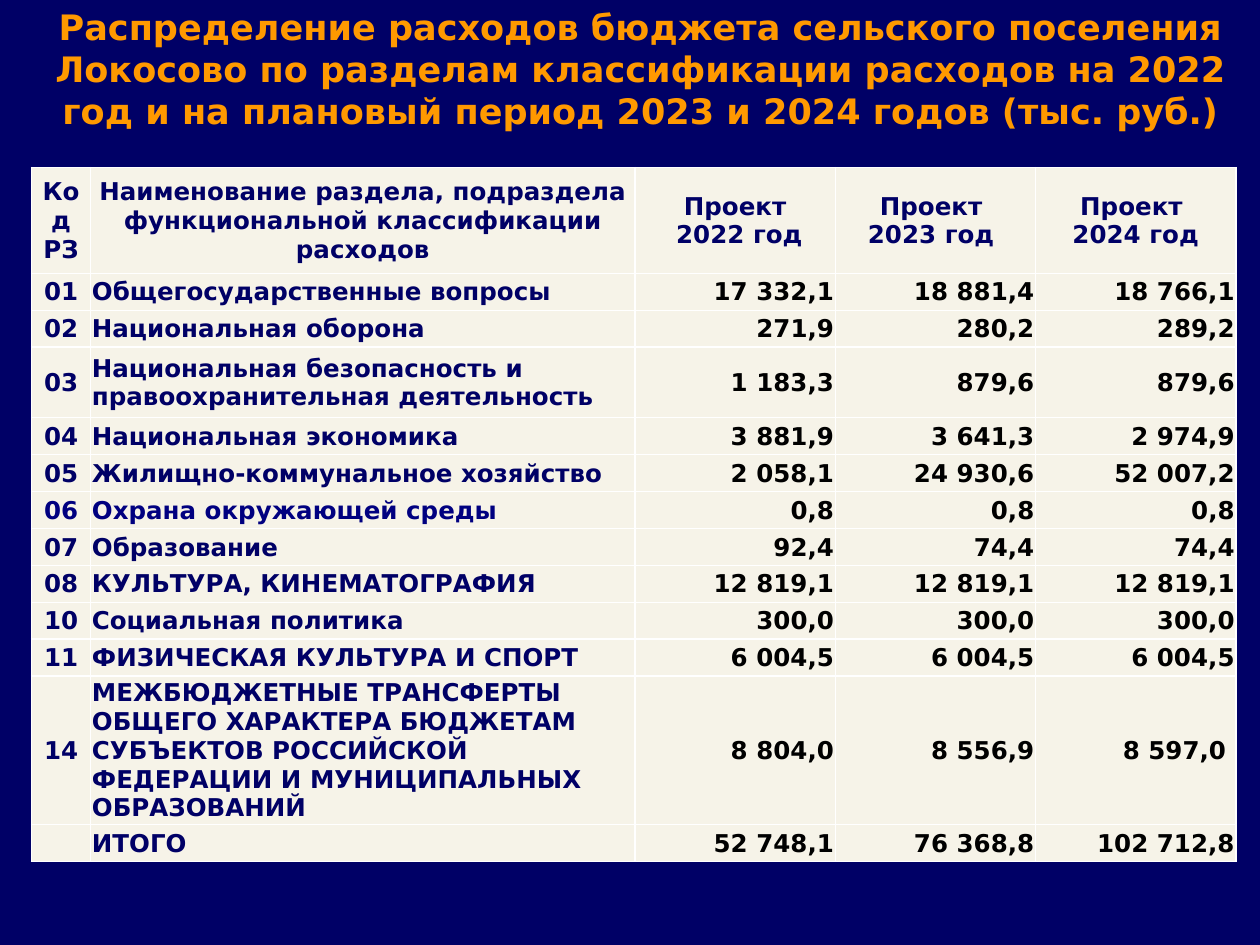
from lxml import etree
from pptx import Presentation, util as u
from pptx.dml.color import RGBColor
from pptx.enum import text
from pptx.oxml.ns import qn

TITLE = ("Распределение расходов бюджета сельского поселения Локосово по разделам "
         "классификации расходов на 2022 год и на плановый период 2023 и 2024 годов (тыс. руб.)")
HEADER = ("Код РЗ", "Наименование раздела, подраздела функциональной классификации расходов",
          "Проект\n 2022 год", "Проект \n2023 год ", "Проект \n2024 год")
SECTIONS = [
    ("01", "Общегосударственные вопросы", "17 332,1", "18 881,4", "18 766,1"),
    ("02", "Национальная оборона", "271,9", "280,2", "289,2"),
    ("03", "Национальная безопасность и правоохранительная деятельность",
     "1 183,3", "879,6", "879,6"),
    ("04", "Национальная экономика", "3 881,9", "3 641,3", "2 974,9"),
    ("05", "Жилищно-коммунальное хозяйство", "2 058,1", "24 930,6", "52 007,2"),
    ("06", "Охрана окружающей среды", "0,8", "0,8", "0,8"),
    ("07", "Образование", "92,4", "74,4", "74,4"),
    ("08", "КУЛЬТУРА, КИНЕМАТОГРАФИЯ", "12 819,1", "12 819,1", "12 819,1"),
    ("10", "Социальная политика", "300,0", "300,0", "300,0"),
    ("11", "ФИЗИЧЕСКАЯ КУЛЬТУРА И СПОРТ", "6 004,5", "6 004,5", "6 004,5"),
    ("14", "МЕЖБЮДЖЕТНЫЕ ТРАНСФЕРТЫ ОБЩЕГО ХАРАКТЕРА БЮДЖЕТАМ СУБЪЕКТОВ РОССИЙСКОЙ "
           "ФЕДЕРАЦИИ И МУНИЦИПАЛЬНЫХ ОБРАЗОВАНИЙ", "8 804,0", "8 556,9", "8 597,0 "),
    ("", "ИТОГО", "52 748,1", "76 368,8", "102 712,8"),
]
ROWS = [HEADER, *SECTIONS]

THEME = {
    "font": "DejaVu Sans", "title_size": 20, "table_size": 14,
    "background": "000066", "title": "FF9900", "label": "000066", "label_06": "000080",
    "amount": "000000", "cell": "F6F3E8", "border": "FFFFFF",
}
TABLE_AT = (0.25, 1.33, 9.55, 5.5)
COLUMN_WIDTHS = (0.47, 4.32, 1.59, 1.59, 1.59)
TALL_ROWS = {0: 0.84, 3: 0.56, 11: 1.17}
CENTER, LEFT, RIGHT = text.PP_ALIGN.CENTER, text.PP_ALIGN.LEFT, text.PP_ALIGN.RIGHT


def color(name):
    return RGBColor.from_string(THEME[name])


def style_text(frame, size, color_name, alignment):
    for para in frame.paragraphs:
        para.alignment = alignment
        for span in para.runs:
            span.font.name = THEME["font"]
            span.font.size = u.Pt(size)
            span.font.bold = True
            span.font.color.rgb = color(color_name)
        if not para.runs:  # keeps an empty cell from stretching its row
            etree.SubElement(para._p, qn("a:endParaRPr"), sz=str(size * 100))


def draw_borders(cell):
    properties = cell._tc.get_or_add_tcPr()
    for side in ("lnL", "lnR", "lnT", "lnB"):
        line = etree.SubElement(properties, qn(f"a:{side}"), w=str(u.Pt(1)))
        fill = etree.SubElement(line, qn("a:solidFill"))
        etree.SubElement(fill, qn("a:srgbClr"), val=THEME["border"])


def add_title(page):
    box = page.shapes.add_textbox(*map(u.Inches, (0.17, 0, 9.83, 1.08)))
    frame = box.text_frame
    frame.word_wrap = True
    frame.vertical_anchor = text.MSO_ANCHOR.MIDDLE
    frame.text = TITLE
    style_text(frame, THEME["title_size"], "title", CENTER)


def fill_cell(cell, content, row, column):
    cell.margin_left = cell.margin_right = cell.margin_top = u.Inches(0.01)
    cell.margin_bottom = 0
    cell.vertical_anchor = text.MSO_ANCHOR.MIDDLE
    draw_borders(cell)
    cell.fill.solid()
    cell.fill.fore_color.rgb = color("cell")

    if row == 0 or column == 0:
        alignment = CENTER
    else:
        alignment = LEFT if column == 1 else RIGHT
    if row > 0 and column > 1:
        color_name = "amount"
    else:
        color_name = "label_06" if ROWS[row][0] == "06" else "label"
    cell.text_frame.text = content
    style_text(cell.text_frame, THEME["table_size"], color_name, alignment)


def add_budget_table(page):
    table = page.shapes.add_table(len(ROWS), len(HEADER), *map(u.Inches, TABLE_AT)).table
    table.first_row = table.horz_banding = False
    for column, width in zip(table.columns, COLUMN_WIDTHS):
        column.width = u.Inches(width)
    regular = (TABLE_AT[3] - sum(TALL_ROWS.values())) / (len(ROWS) - len(TALL_ROWS))
    for r, contents in enumerate(ROWS):
        table.rows[r].height = u.Inches(TALL_ROWS.get(r, regular))
        for c, content in enumerate(contents):
            fill_cell(table.cell(r, c), content, r, c)


def main():
    deck = Presentation()
    deck.slide_width, deck.slide_height = u.Inches(10), u.Inches(7.5)
    page = deck.slides.add_slide(deck.slide_layouts[6])
    page.background.fill.solid()
    page.background.fill.fore_color.rgb = color("background")
    add_title(page)
    add_budget_table(page)
    deck.save("out.pptx")


if __name__ == "__main__":
    main()
